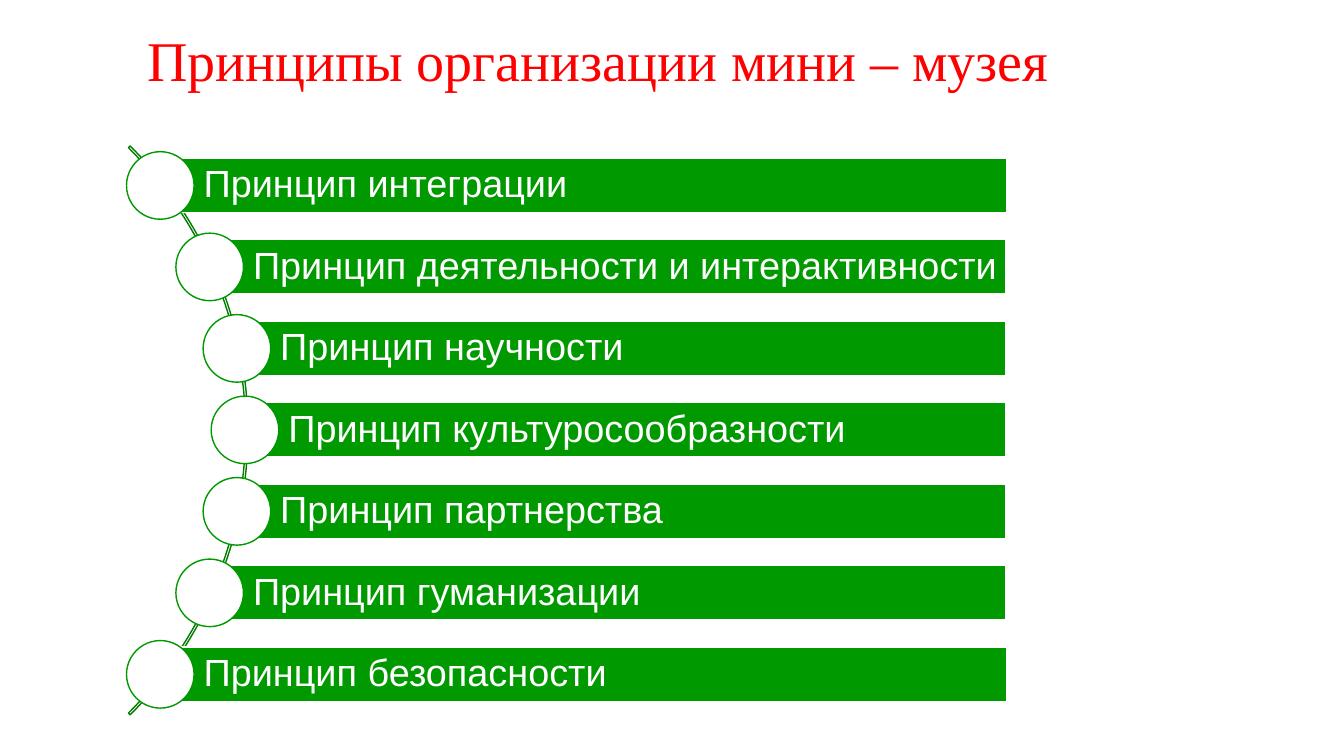
from pptx import Presentation
from pptx.dml.color import RGBColor
from pptx.enum.shapes import MSO_SHAPE as Shape
from pptx.enum.text import MSO_ANCHOR as Anchor, MSO_AUTO_SIZE as AutoSize, PP_ALIGN as Align
from pptx.util import Inches, Pt

PRINCIPLES = [
    "Принцип интеграции",
    "Принцип деятельности и интерактивности",
    "Принцип научности",
    "Принцип культуросообразности",
    "Принцип партнерства",
    "Принцип гуманизации",
    "Принцип безопасности",
]
INDENTS = [1.59, 2.08, 2.35, 2.43, 2.35, 2.08, 1.59]
FIRST_CENTER, LAST_CENTER = 1.84, 6.69
BAR_RIGHT, BAR_HEIGHT, CIRCLE_SIZE = 9.98, 0.54, 0.67


def color(value):
    return RGBColor.from_string(value)


def apply(target, values):
    for name, value in values.items():
        setattr(target, name, value)


class PrinciplesSlide:
    GREEN, DARK_GREEN, WHITE, RED = "009900", "007B00", "FFFFFF", "FF0000"
    TITLE_FONT = {"name": "Times New Roman", "size": Pt(40), "bold": False}
    BAR_FONT = {"name": "Arial", "size": Pt(27)}
    TITLE_FRAME = {"vertical_anchor": Anchor.BOTTOM, "auto_size": AutoSize.NONE}
    BAR_FRAME = {
        "vertical_anchor": Anchor.MIDDLE,
        "word_wrap": True,
        "margin_left": Inches(0.43),
        "margin_right": Inches(0.07),
        "margin_top": Inches(0.07),
        "margin_bottom": Inches(0.07),
    }

    def __init__(self, deck):
        self.page = deck.slides.add_slide(deck.slide_layouts[5])

    def label(self, box, text, frame, font, ink, spacing):
        apply(box.text_frame, frame)
        para = box.text_frame.paragraphs[0]
        apply(para, {"alignment": Align.LEFT, "line_spacing": spacing})
        span = para.add_run()
        span.text = text
        apply(span.font, font)
        span.font.color.rgb = color(ink)

    def title(self, text):
        box = self.page.shapes.title
        apply(box, {"left": Inches(1.36), "top": Inches(0.14),
                    "width": Inches(11.5), "height": Inches(0.83)})
        self.label(box, text, self.TITLE_FRAME, self.TITLE_FONT, self.RED, 1.0)

    def shape(self, kind, left, top, width, height, fill, line):
        box = self.page.shapes.add_shape(
            kind, Inches(left), Inches(top), Inches(width), Inches(height))
        box.shadow.inherit = False
        if fill:
            box.fill.solid()
            box.fill.fore_color.rgb = color(fill)
        else:
            box.fill.background()
        box.line.color.rgb = color(line)
        box.line.width = Pt(1)
        return box

    def arc(self):
        box = self.shape(Shape.BLOCK_ARC, -5.52, 0.28, 7.98, 7.98, None, self.DARK_GREEN)
        for index, value in enumerate([189, 27, 0.003]):
            box.adjustments[index] = value

    def bar(self, text, left, center):
        box = self.shape(Shape.RECTANGLE, left, center - BAR_HEIGHT / 2,
                         BAR_RIGHT - left, BAR_HEIGHT, self.GREEN, self.WHITE)
        self.label(box, text, self.BAR_FRAME, self.BAR_FONT, self.WHITE, 0.9)

    def circle(self, center_x, center_y):
        self.shape(Shape.OVAL, center_x - CIRCLE_SIZE / 2, center_y - CIRCLE_SIZE / 2,
                   CIRCLE_SIZE, CIRCLE_SIZE, self.WHITE, self.GREEN)


def main():
    deck = Presentation()
    apply(deck, {"slide_width": Inches(13.33), "slide_height": Inches(7.5)})
    slide = PrinciplesSlide(deck)
    slide.title("Принципы организации мини – музея")
    slide.arc()
    step = (LAST_CENTER - FIRST_CENTER) / (len(PRINCIPLES) - 1)
    for row, (text, left) in enumerate(zip(PRINCIPLES, INDENTS)):
        center = FIRST_CENTER + row * step
        slide.bar(text, left, center)
        slide.circle(left, center)
    deck.save("out.pptx")


if __name__ == "__main__":
    main()
